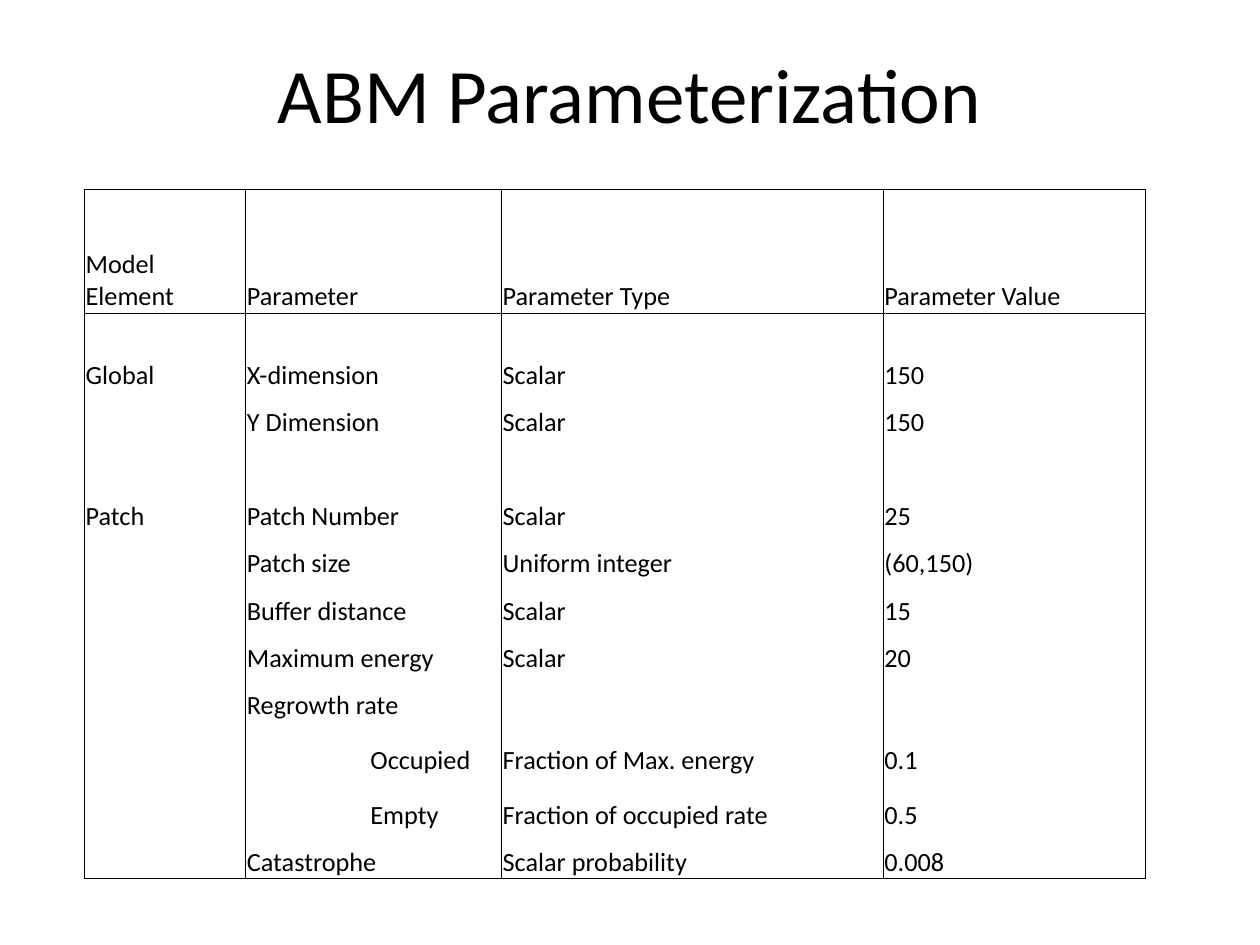
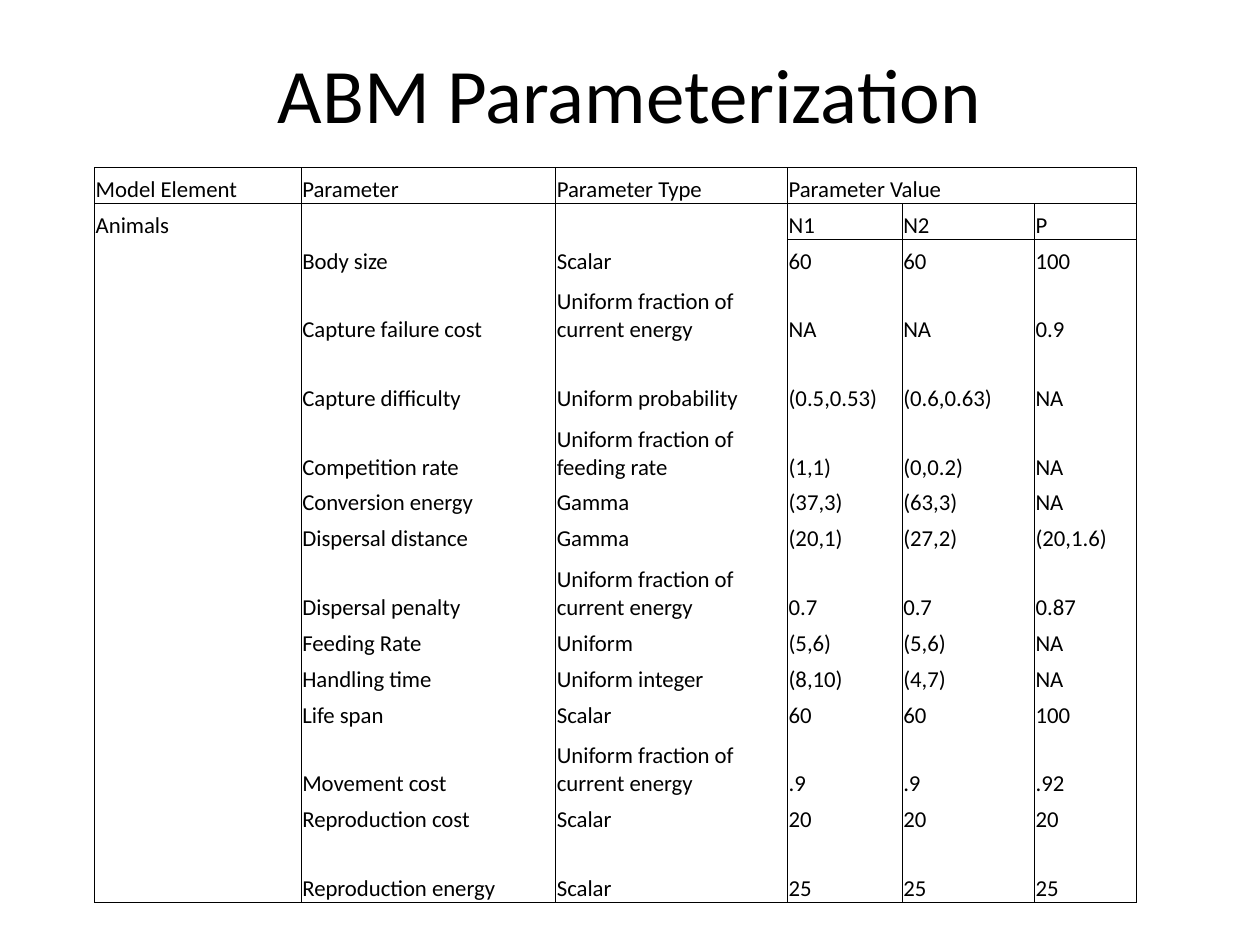
from dataclasses import dataclass
from itertools import zip_longest

from lxml import etree
from pptx import Presentation
from pptx.dml.color import RGBColor
from pptx.enum.text import MSO_ANCHOR, PP_ALIGN
from pptx.oxml.ns import qn
from pptx.util import Emu, Pt

MIDDLE, BOTTOM = MSO_ANCHOR.MIDDLE, MSO_ANCHOR.BOTTOM
CENTER = PP_ALIGN.CENTER

EMU_PER_PX = 4572  # 200 px to the inch
COLORS = {"text": "000000", "rule": "000000"}
FONT = "Calibri"
TITLE = "ABM Parameterization"
TITLE_SIZE = 44
THIN, THICK = 0.5, 1.0
CELL_INSET = 2


@dataclass(frozen=True)
class Row:
    """One table row: spans gives the columns taken by each text in turn."""
    height: int
    spans: tuple[int, ...]
    texts: tuple[str, ...] = ()


@dataclass(frozen=True)
class ParameterTable:
    """Dividers are the columns with a rule on their left; value_columns
    are divided below the header only, under a subheader with a thick rule."""
    left: int
    top: int
    font_size: int
    widths: tuple[int, ...]
    dividers: tuple[int, ...]
    rows: tuple[Row, ...]
    value_columns: tuple[int, ...] = ()

    def vertical_rule(self, row: int, edge: int) -> float:
        edges = (*self.dividers, len(self.widths))
        if row > 0:
            edges += self.value_columns
        return THIN if edge in edges else 0

    def horizontal_rule(self, edge: int, column: int) -> float:
        if edge == 2 and column in self.value_columns:
            return THICK
        return THIN if edge in (0, 1, len(self.rows)) else 0


WHOLE = (1, 3, 1, 1, 1, 1)
WIDE_VALUE = (1, 3, 1, 2, 1)
SPLIT = (1, 2, 1, 1, 1, 1, 1)
INDENTED = (1, 1, 2, 1, 1, 1, 1)

HABITAT = ParameterTable(
    left=134, top=300, font_size=15,
    widths=(256, 196, 108, 102, 606, 164, 126, 126),
    dividers=(0, 1, 4, 5),
    rows=(
        Row(197, WIDE_VALUE, ("Model Element", "Parameter", "Parameter Type", "Parameter Value")),
        Row(124, SPLIT, ("Global", "X-dimension", "", "Scalar", "150")),
        Row(75, WHOLE, ("", "Y Dimension", "Scalar", "150")),
        Row(75, SPLIT),
        Row(75, WHOLE, ("Patch", "Patch Number", "Scalar", "25")),
        Row(75, WIDE_VALUE, ("", "Patch size", "Uniform integer", "(60,150)")),
        Row(75, WHOLE, ("", "Buffer distance", "Scalar", "15")),
        Row(75, WHOLE, ("", "Maximum energy", "Scalar", "20")),
        Row(75, WHOLE, ("", "Regrowth rate")),
        Row(87, INDENTED, ("", "", "Occupied", "Fraction of Max. energy", "0.1")),
        Row(87, INDENTED, ("", "", "Empty", "Fraction of occupied rate", "0.5")),
        Row(75, WIDE_VALUE, ("", "Catastrophe", "Scalar probability", "0.008")),
    ),
)

SHORT, TALL = 57, 109
ENERGY_FRACTION = "Uniform fraction of current energy"
ANIMAL_PARAMETERS = (
    (SHORT, "Body size", "Scalar", "60", "60", "100"),
    (TALL, "Capture failure cost", ENERGY_FRACTION, "NA", "NA", "0.9"),
    (TALL, "Capture difficulty", "Uniform probability", "(0.5,0.53)", "(0.6,0.63)", "NA"),
    (TALL, "Competition rate", "Uniform fraction of feeding rate", "(1,1)", "(0,0.2)", "NA"),
    (SHORT, "Conversion energy", "Gamma", "(37,3)", "(63,3)", "NA"),
    (SHORT, "Dispersal distance", "Gamma", "(20,1)", "(27,2)", "(20,1.6)"),
    (TALL, "Dispersal penalty", ENERGY_FRACTION, "0.7", "0.7", "0.87"),
    (SHORT, "Feeding Rate", "Uniform", "(5,6)", "(5,6)", "NA"),
    (SHORT, "Handling time", "Uniform integer", "(8,10)", "(4,7)", "NA"),
    (SHORT, "Life span", "Scalar", "60", "60", "100"),
    (TALL, "Movement cost", ENERGY_FRACTION, ".9", ".9", ".92"),
    (SHORT, "Reproduction cost", "Scalar", "20", "20", "20"),
    (TALL, "Reproduction energy", "Scalar", "25", "25", "25"),
)

ANIMALS = ParameterTable(
    left=150, top=266, font_size=13,
    widths=(328, 110, 294, 368, 182, 210, 162),
    dividers=(0, 1, 3, 4),
    value_columns=(4, 5, 6),
    rows=(
        Row(SHORT, (1, 2, 1, 2, 1),
            ("Model Element", "Parameter", "Parameter Type", "Parameter Value")),
        Row(SHORT, (1,) * 7, ("Animals", "", "", "", "N1", "N2", "P")),
        *(Row(height, (1, 2, 1, 1, 1, 1), ("", *texts))
          for height, *texts in ANIMAL_PARAMETERS),
    ),
)


def px(length: int) -> Emu:
    return Emu(length * EMU_PER_PX)


def style_paragraph(paragraph, size: int) -> None:
    font = paragraph.font
    font.name, font.size = FONT, Pt(size)
    font.color.rgb = RGBColor.from_string(COLORS["text"])


def add_title(slide) -> None:
    frame = slide.shapes.add_textbox(px(100), px(60), px(1800), px(174)).text_frame
    frame.word_wrap = True
    frame.vertical_anchor = MIDDLE
    paragraph = frame.paragraphs[0]
    paragraph.text = TITLE
    paragraph.alignment = CENTER
    style_paragraph(paragraph, TITLE_SIZE)


def set_border(cell, side: str, width: float) -> None:
    properties = cell._tc.get_or_add_tcPr()
    line = etree.SubElement(properties, qn(f"a:ln{side}"), w=str(Pt(width)))
    if width:
        fill = etree.SubElement(line, qn("a:solidFill"))
        etree.SubElement(fill, qn("a:srgbClr"), val=COLORS["rule"])
    else:
        etree.SubElement(line, qn("a:noFill"))


def format_cell(cell, text: str, size: int, borders: dict[str, float]) -> None:
    for side, width in borders.items():
        set_border(cell, side, width)
    cell.fill.background()
    cell.margin_left = cell.margin_right = cell.margin_top = px(CELL_INSET)
    cell.margin_bottom = 0
    cell.vertical_anchor = BOTTOM
    paragraph = cell.text_frame.paragraphs[0]
    style_paragraph(paragraph, size)
    if text:
        paragraph.text = text
    else:  # keeps an empty cell from stretching its row
        etree.SubElement(paragraph._p, qn("a:endParaRPr"), sz=str(size * 100))


def add_parameter_table(slide, spec: ParameterTable) -> None:
    height = sum(row.height for row in spec.rows)
    grid = slide.shapes.add_table(
        len(spec.rows), len(spec.widths),
        px(spec.left), px(spec.top), px(sum(spec.widths)), px(height)).table
    grid.first_row = grid.horz_banding = False
    for column, width in zip(grid.columns, spec.widths):
        column.width = px(width)
    for index, row in enumerate(spec.rows):
        grid.rows[index].height = px(row.height)
        start = 0
        for span, text in zip_longest(row.spans, row.texts, fillvalue=""):
            end = start + span
            for column in range(start, end):
                first = column == start
                borders = {
                    "L": spec.vertical_rule(index, column),
                    "R": spec.vertical_rule(index, end if first else column + 1),
                    "T": spec.horizontal_rule(index, column),
                    "B": spec.horizontal_rule(index + 1, column),
                }
                format_cell(grid.cell(index, column), text if first else "",
                            spec.font_size, borders)
            if span > 1:
                grid.cell(index, start).merge(grid.cell(index, end - 1))
            start = end


def main() -> None:
    deck = Presentation()
    deck.slide_width, deck.slide_height = px(2000), px(1500)
    blank = deck.slide_layouts[6]
    for spec in (HABITAT, ANIMALS):
        slide = deck.slides.add_slide(blank)
        add_title(slide)
        add_parameter_table(slide, spec)
    deck.save("out.pptx")


if __name__ == "__main__":
    main()
